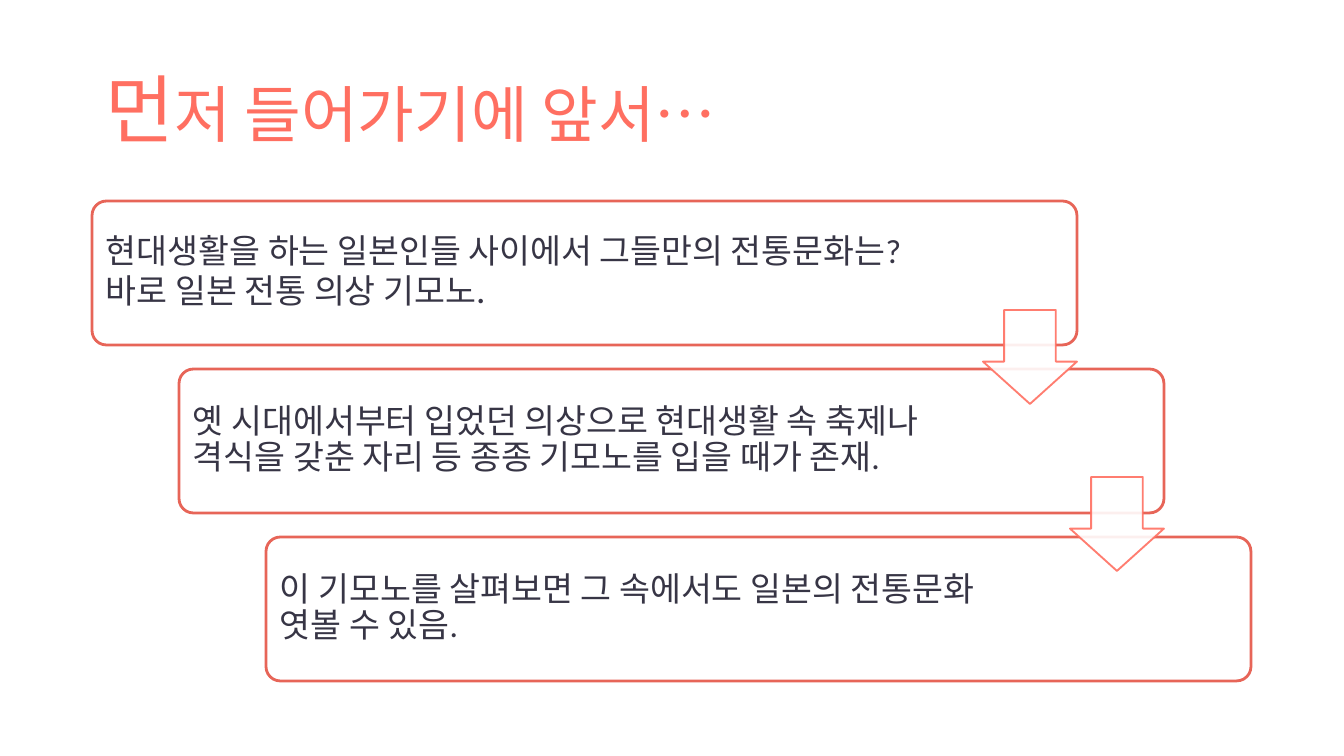
from lxml import etree
from pptx import Presentation
from pptx.dml.color import RGBColor
from pptx.enum.shapes import MSO_SHAPE
from pptx.enum.text import MSO_ANCHOR, MSO_AUTO_SIZE, PP_ALIGN
from pptx.oxml.ns import qn
from pptx.util import Pt

ROUNDED = MSO_SHAPE.ROUNDED_RECTANGLE
DOWN_ARROW = MSO_SHAPE.DOWN_ARROW
MIDDLE = MSO_ANCHOR.MIDDLE
LEFT = PP_ALIGN.LEFT
NO_AUTOFIT = MSO_AUTO_SIZE.NONE

# Content: spans are (text, size in points)
TITLE = [("먼", 40), ("저 들어가기에 앞서…", 33)]
# Each step: spans, width of its text in px
STEPS = [
    ([("현대생활을 하는 일본인들 사이에서 그들만의 전통문화는? 바로 일본 전통 의상 기모노", 18),
      (".", 20)], 831),
    ([("옛 시대에서부터 입었던 의상으로 현대생활 속 축제나 격식을 갖춘 자리 등 "
       "종종 기모노를 입을 때가 존재.", 18)], 797),
    ([("이 기모노를 살펴보면 그 속에서도 일본의 전통문화 엿볼 수 있음.", 18)], 750),
]

# Style and layout, lengths in px
FONT = "Calibri"
CORAL, BORDER, INK, WHITE = "FF6F61", "E76558", "373545", "FFFFFF"
EMU_PER_PX = 914400 / 134.4
BOX_LEFT, BOX_TOP, BOX_WIDTH, BOX_HEIGHT = 92, 201, 985, 144
STEP_X, STEP_Y = 87, 168
TEXT_INSET = 4
TEXT_MARGIN = 10
ARROW_SIZE, ARROW_TOP = 94, 310
ARROW_STEP_Y = 167


def px(length):
    return round(length * EMU_PER_PX)


def color(value):
    return RGBColor.from_string(value)


def add_outlined(slide, kind, area, adjustments, line, width):
    shape = slide.shapes.add_shape(kind, *map(px, area))
    shape.shadow.inherit = False
    for index, value in enumerate(adjustments):
        shape.adjustments[index] = value
    shape.fill.solid()
    shape.fill.fore_color.rgb = color(WHITE)
    shape.line.color.rgb = color(line)
    shape.line.width = Pt(width)
    return shape


def write(frame, spans, text_color):
    frame.word_wrap = True
    frame.auto_size = NO_AUTOFIT
    frame.vertical_anchor = MIDDLE
    para = frame.paragraphs[0]
    para.alignment = LEFT
    para.line_spacing = 0.9
    para.font.name = FONT
    para.font.color.rgb = color(text_color)
    for text, size in spans:
        span = para.add_run()
        span.text = text
        span.font.size = Pt(size)


deck = Presentation()
deck.slide_width, deck.slide_height = px(1344), px(756)
slide = deck.slides.add_slide(deck.slide_layouts[5])

# Title
title = slide.shapes.title
title.left, title.top, title.width, title.height = map(px, (92, 40, 1159, 146))
write(title.text_frame, TITLE, CORAL)

# Staircase of boxes, each with its text
for index, (spans, text_width) in enumerate(STEPS):
    left, top = BOX_LEFT + index * STEP_X, BOX_TOP + index * STEP_Y
    add_outlined(slide, ROUNDED, (left, top, BOX_WIDTH, BOX_HEIGHT), [0.1], BORDER, 1.5)
    area = (left + TEXT_INSET, top + TEXT_INSET, text_width, BOX_HEIGHT - 2 * TEXT_INSET)
    frame = slide.shapes.add_textbox(*map(px, area)).text_frame
    frame.margin_left = frame.margin_right = px(TEXT_MARGIN)
    frame.margin_top = frame.margin_bottom = px(TEXT_MARGIN)
    write(frame, spans, INK)

# Translucent arrows from each box to the next, flush with the box's right edge
for index in range(len(STEPS) - 1):
    left = BOX_LEFT + BOX_WIDTH - ARROW_SIZE + index * STEP_X
    top = ARROW_TOP + index * ARROW_STEP_Y
    # Adjustments of a down arrow: shaft width, head length
    arrow = add_outlined(slide, DOWN_ARROW, (left, top, ARROW_SIZE, ARROW_SIZE),
                         [0.55, 0.45], CORAL, 1)
    for paint in arrow.element.spPr.iter(qn("a:srgbClr")):
        etree.SubElement(paint, qn("a:alpha"), val="90000")

deck.save("out.pptx")
